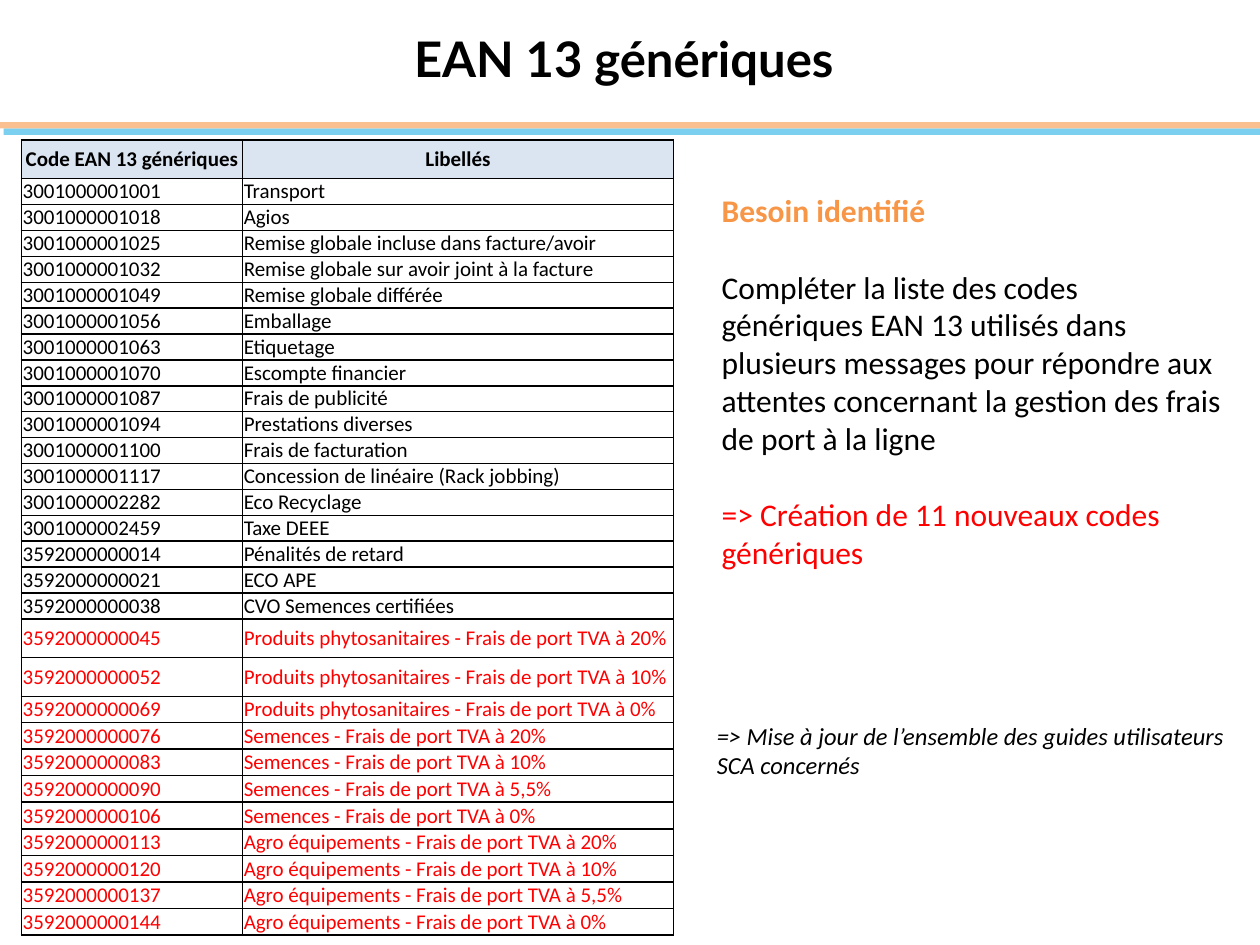
from lxml.etree import SubElement
from pptx import Presentation
from pptx.dml.color import RGBColor as Rgb
from pptx.enum.shapes import MSO_SHAPE as Shape
from pptx.enum.text import MSO_ANCHOR as Anchor, PP_ALIGN as Align
from pptx.oxml.ns import qn
from pptx.util import Inches, Pt

THEME = {
    "black": Rgb(0, 0, 0),
    "red": Rgb(255, 0, 0),
    "orange": Rgb.from_string("F79646"),
    "peach": Rgb.from_string("FAC090"),
    "sky": Rgb.from_string("7BD0EF"),
    "header": Rgb.from_string("DBE5F1"),
    "title_font": "Lato",
    "body_font": "Calibri",
    "title_size": Pt(28),
    "lead_size": Pt(18),
    "note_size": Pt(14),
    "table_size": Pt(12),
}

CODES = [
    ("3001000001001", "Transport"),
    ("3001000001018", "Agios"),
    ("3001000001025", "Remise globale incluse dans facture/avoir"),
    ("3001000001032", "Remise globale sur avoir joint à la facture"),
    ("3001000001049", "Remise globale différée"),
    ("3001000001056", "Emballage"),
    ("3001000001063", "Etiquetage"),
    ("3001000001070", "Escompte financier"),
    ("3001000001087", "Frais de publicité"),
    ("3001000001094", "Prestations diverses"),
    ("3001000001100", "Frais de facturation"),
    ("3001000001117", "Concession de linéaire (Rack jobbing)"),
    ("3001000002282", "Eco Recyclage"),
    ("3001000002459", "Taxe DEEE"),
    ("3592000000014", "Pénalités de retard"),
    ("3592000000021", "ECO APE"),
    ("3592000000038", "CVO Semences certifiées"),
]
NEW_CODES = [
    ("3592000000045", "Produits phytosanitaires - Frais de port TVA à 20%"),
    ("3592000000052", "Produits phytosanitaires - Frais de port TVA à 10%"),
    ("3592000000069", "Produits phytosanitaires - Frais de port TVA à 0%"),
    ("3592000000076", "Semences - Frais de port TVA à 20%"),
    ("3592000000083", "Semences - Frais de port TVA à 10%"),
    ("3592000000090", "Semences - Frais de port TVA à 5,5%"),
    ("3592000000106", "Semences - Frais de port TVA à 0%"),
    ("3592000000113", "Agro équipements - Frais de port TVA à 20%"),
    ("3592000000120", "Agro équipements - Frais de port TVA à 10%"),
    ("3592000000137", "Agro équipements - Frais de port TVA à 5,5%"),
    ("3592000000144", "Agro équipements - Frais de port TVA à 0%"),
]

prs = Presentation()
prs.slide_width, prs.slide_height = Inches(10), Inches(7.5)
slide = prs.slides.add_slide(prs.slide_layouts[5])


def area(left, top, width, height):
    """Turn percentages of the slide into a left, top, width, height tuple."""
    col, row = prs.slide_width / 100, prs.slide_height / 100
    return int(left * col), int(top * row), int(width * col), int(height * row)


def write(paragraph, text, color="black", size="table_size", font="body_font",
          bold=False, italic=False):
    run = paragraph.add_run()
    run.text = text
    look = {"name": THEME[font], "size": THEME[size], "bold": bold, "italic": italic}
    for key, value in look.items():
        setattr(run.font, key, value)
    run.font.color.rgb = THEME[color]


# Stripes under the title
for color, left, top in (("sky", 0.3, 13.6), ("peach", 0, 12.93)):
    stripe = slide.shapes.add_shape(Shape.RECTANGLE, *area(left, top, 100 - left, 0.67))
    stripe.shadow.inherit = False
    stripe.fill.solid()
    stripe.fill.fore_color.rgb = THEME[color]
    stripe.line.fill.background()

# Title
title = slide.shapes.title
title.left, title.top, title.width, title.height = area(0.4, 1.07, 98.2, 10.13)
title.text_frame.vertical_anchor = Anchor.MIDDLE
title.text_frame.paragraphs[0].alignment = Align.CENTER
write(title.text_frame.paragraphs[0], "EAN 13 génériques", size="title_size",
      font="title_font", bold=True)

# Table of codes
entries = [("Code EAN 13 génériques", "Libellés")] + CODES + NEW_CODES
first_new = 1 + len(CODES)
tall_rows = (0, first_new, first_new + 1)
first_padded = first_new + 3

table = slide.shapes.add_table(len(entries), 2, *area(1.7, 14.8, 51.8, 84.2)).table
table.first_row = table.horz_banding = False
for column, share in zip(table.columns, (17.55, 34.2)):
    column.width = int(prs.slide_width * share / 100)

for i, entry in enumerate(entries):
    padded = i >= first_padded
    table.rows[i].height = Pt(22.2 if i in tall_rows else 15.2 if padded else 14.8)
    for j, text in enumerate(entry):
        cell = table.cell(i, j)
        layout = {
            "margin_left": Inches(0.01),
            "margin_right": Inches(0.01),
            "margin_top": Pt(0.5 if padded else 0),
            "margin_bottom": 0,
            "vertical_anchor": Anchor.MIDDLE,
        }
        for key, value in layout.items():
            setattr(cell, key, value)
        paragraph = cell.text_frame.paragraphs[0]
        paragraph.alignment = Align.CENTER if i == 0 else Align.LEFT
        write(paragraph, text, "red" if i >= first_new else "black", bold=i == 0)
        for side in ("lnL", "lnR", "lnT", "lnB"):
            border = SubElement(cell._tc.get_or_add_tcPr(), qn(f"a:{side}"), w=str(Pt(1)))
            fill = SubElement(border, qn("a:solidFill"))
            SubElement(fill, qn("a:srgbClr"), val=str(THEME["black"]))
        if i == 0:
            cell.fill.solid()
            cell.fill.fore_color.rgb = THEME["header"]
        else:
            cell.fill.background()

# Need and follow-up beside the table
need = [
    ("Besoin identifié", {"color": "orange", "bold": True}),
    ("Compléter la liste des codes génériques EAN 13 utilisés dans plusieurs messages "
     "pour répondre aux attentes concernant la gestion des frais de port à la ligne", {}),
    ("=> Création de 11 nouveaux codes génériques", {"color": "red"}),
]
follow_up = [
    ("=> Mise à jour de l’ensemble des guides utilisateurs SCA concernés", {"italic": True}),
]
for place, size, statements in (
    (area(56.3, 19.6, 41.7, 41.73), "lead_size", need),
    (area(55.9, 75.6, 44.1, 7.6), "note_size", follow_up),
):
    frame = slide.shapes.add_textbox(*place).text_frame
    frame.word_wrap = True
    for i, (text, look) in enumerate(statements):
        paragraph = frame.add_paragraph() if i else frame.paragraphs[0]
        if i:
            paragraph.space_before = Pt(22)
        write(paragraph, text, size=size, **look)

prs.save("out.pptx")
